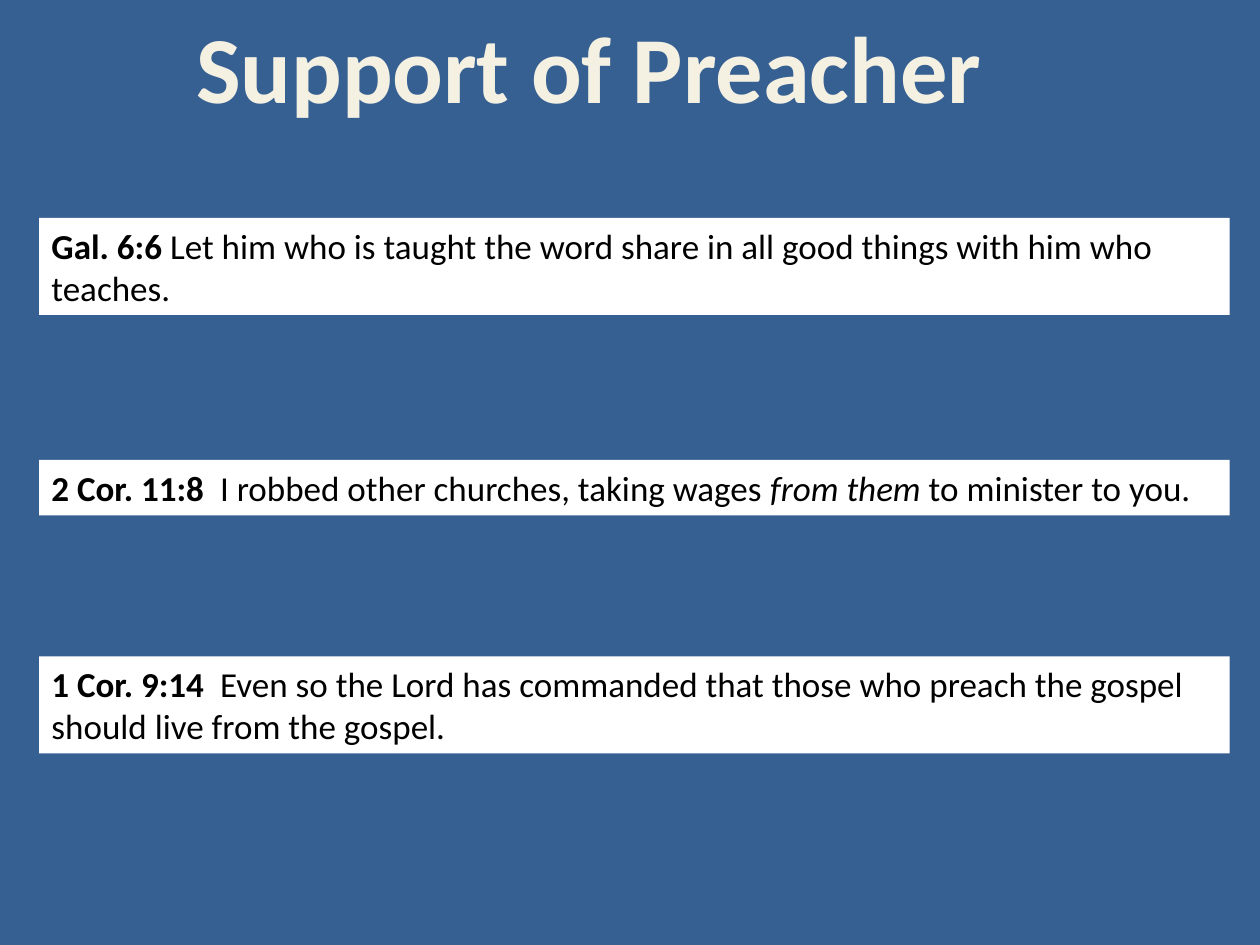
import pptx
import pptx.util
import pptx.dml.color
import pptx.enum.shapes
import pptx.enum.text

Inches = pptx.util.Inches
Text = pptx.enum.text


def color(code):
    return pptx.dml.color.RGBColor.from_string(code)


class Deck:
    font = "Calibri"
    back, cream, white, black = "376092", "F4F1E3", "FFFFFF", "000000"

    def __init__(self, wide, high):
        self.prs = pptx.Presentation()
        self.prs.slide_width = Inches(wide)
        self.prs.slide_height = Inches(high)
        # Layout 5 holds a title only
        self.slide = self.prs.slides.add_slide(self.prs.slide_layouts[5])
        fill = self.slide.background.fill
        fill.solid()
        fill.fore_color.rgb = color(self.back)

    def style(self, run, size, tone, bold=False, italic=False):
        font = run.font
        font.name = self.font
        font.size = pptx.util.Pt(size)
        font.color.rgb = color(tone)
        font.bold = bold
        font.italic = italic

    def title(self, text, left, top, wide, high):
        shape = self.slide.shapes.title
        shape.left, shape.top = Inches(left), Inches(top)
        shape.width, shape.height = Inches(wide), Inches(high)
        frame = shape.text_frame
        frame.text = text
        frame.word_wrap = False
        frame.auto_size = Text.MSO_AUTO_SIZE.SHAPE_TO_FIT_TEXT
        frame.vertical_anchor = Text.MSO_ANCHOR.TOP
        par = frame.paragraphs[0]
        par.alignment = Text.PP_ALIGN.CENTER
        self.style(par.runs[0], 54, self.cream, bold=True)

    def verse(self, parts, left, top, wide, high):
        shape = self.slide.shapes.add_shape(
            pptx.enum.shapes.MSO_SHAPE.RECTANGLE,
            Inches(left), Inches(top), Inches(wide), Inches(high))
        shape.shadow.inherit = False
        shape.fill.solid()
        shape.fill.fore_color.rgb = color(self.white)
        shape.line.fill.background()
        frame = shape.text_frame
        frame.word_wrap = True
        frame.auto_size = Text.MSO_AUTO_SIZE.SHAPE_TO_FIT_TEXT
        frame.vertical_anchor = Text.MSO_ANCHOR.TOP
        par = frame.paragraphs[0]
        par.alignment = Text.PP_ALIGN.LEFT
        for text, look in parts:
            run = par.add_run()
            run.text = text
            self.style(run, 20, self.black, look == "bold", look == "italic")


# Each verse: top, height, and its text in parts with their look
VERSES = [
    (1.73, 0.77, [
        ("Gal. 6:6 ", "bold"),
        ("Let him who is taught the word share in all good things "
         "with him who teaches.", "plain")]),
    (3.65, 0.44, [
        ("2 Cor. 11:8  ", "bold"),
        ("I robbed other churches, taking wages ", "plain"),
        ("from them", "italic"),
        (" to minister to you.", "plain")]),
    (5.21, 0.77, [
        ("1 Cor. 9:14  ", "bold"),
        ("Even so the Lord has commanded that those who preach the gospel "
         "should live from the gospel.", "plain")]),
]


def main():
    deck = Deck(10, 7.5)
    # Heading
    deck.title("Support of Preacher", 1.42, 0.02, 6.51, 1.01)
    # Bible verses
    for top, high, parts in VERSES:
        deck.verse(parts, 0.31, top, 9.45, high)
    deck.prs.save("out.pptx")


if __name__ == "__main__":
    main()
